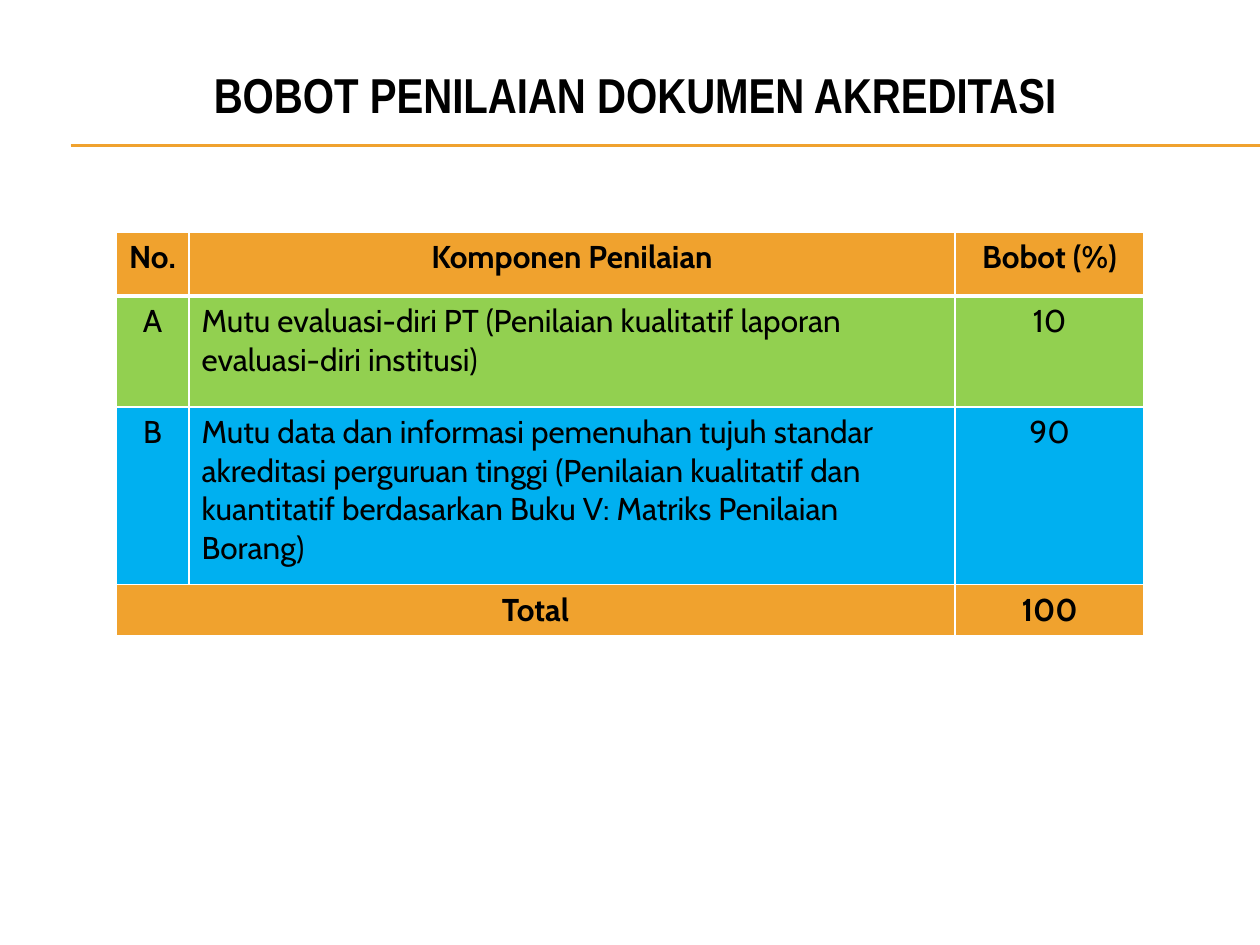
from lxml import etree
from pptx import Presentation, util as u
from pptx.dml.color import RGBColor
from pptx.enum import shapes, text
from pptx.oxml.ns import qn

COLORS = {"black": "000000", "white": "FFFFFF", "orange": "F0A22E",
          "green": "92D050", "blue": "00B0F0"}
CENTER, LEFT = text.PP_ALIGN.CENTER, text.PP_ALIGN.LEFT


def rgb(name):
    return RGBColor.from_string(COLORS[name])


def write(tf, content, font="Cabin", size=18, bold=False, align=CENTER, color="black"):
    p = tf.paragraphs[0]
    p.alignment = align
    r = p.add_run()
    r.text = content
    r.font.name, r.font.size, r.font.bold = font, u.Pt(size), bold
    r.font.color.rgb = rgb(color)


def add_border(cell, side, points):
    """Draw one white cell edge; call before the cell gets its fill."""
    tc_pr = cell._tc.get_or_add_tcPr()
    ln = etree.SubElement(tc_pr, qn("a:ln" + side), w=str(u.Pt(points)))
    fill = etree.SubElement(ln, qn("a:solidFill"))
    etree.SubElement(fill, qn("a:srgbClr"), val=COLORS["white"])


class SlideBuilder:
    """Places elements by shares of the slide's width and height."""

    def __init__(self, prs):
        self.width, self.height = prs.slide_width, prs.slide_height
        self.s = prs.slides.add_slide(prs.slide_layouts[5])

    def x(self, share):
        return u.Emu(round(share * self.width))

    def y(self, share):
        return u.Emu(round(share * self.height))

    def title(self, content, left, top, width, height):
        sp = self.s.shapes.title
        sp.left, sp.top = self.x(left), self.y(top)
        sp.width, sp.height = self.x(width), self.y(height)
        sp.text_frame.vertical_anchor = text.MSO_ANCHOR.MIDDLE
        write(sp.text_frame, content, font="Arial Narrow", size=28, bold=True)

    def rule(self, left, right, top):
        line = self.s.shapes.add_connector(
            shapes.MSO_CONNECTOR.STRAIGHT, self.x(left), self.y(top), self.x(right), self.y(top))
        line.line.color.rgb = rgb("orange")
        line.line.width = u.Pt(0.75)
        etree.SubElement(line._element.spPr, qn("a:effectLst"))

    def table(self, rows, left, top, col_shares, row_shares):
        """Each row is (fill, bold, cell texts); None merges into the cell to its left."""
        table = self.s.shapes.add_table(
            len(rows), len(col_shares), self.x(left), self.y(top),
            self.x(sum(col_shares)), self.y(sum(row_shares))).table
        table.horz_banding = False
        for column, share in zip(table.columns, col_shares):
            column.width = self.x(share)
        for i, (fill, bold, texts) in enumerate(rows):
            table.rows[i].height = self.y(row_shares[i])
            for j, content in enumerate(texts):
                cell = table.cell(i, j)
                for side in "LRTB":
                    under_header = (i, side) in ((0, "B"), (1, "T"))
                    add_border(cell, side, 3 if under_header else 1)
                cell.fill.solid()
                cell.fill.fore_color.rgb = rgb(fill)
                if content is None:
                    table.cell(i, j - 1).merge(cell)
                else:
                    align = LEFT if j == 1 and not bold else CENTER
                    write(cell.text_frame, content, bold=bold, align=align)


def main():
    prs = Presentation()
    prs.slide_width, prs.slide_height = u.Inches(10), u.Inches(7.5)
    slide = SlideBuilder(prs)
    for top in (1.15, 1.16):
        slide.rule(0.056, 1, top / 7.5)
    slide.title("BOBOT PENILAIAN DOKUMEN AKREDITASI", 0.05, 0, 0.908, 1.49 / 7.5)
    rows = [
        ("orange", True, ["No.", "Komponen Penilaian", "Bobot (%)"]),
        ("green", False, ["A", "Mutu evaluasi-diri PT (Penilaian kualitatif laporan "
                               "evaluasi-diri institusi)", "10"]),
        ("blue", False, ["B", "Mutu data dan informasi pemenuhan tujuh standar akreditasi "
                              "perguruan tinggi (Penilaian kualitatif dan kuantitatif "
                              "berdasarkan Buku V: Matriks Penilaian Borang)", "90"]),
        ("orange", True, ["Total", None, "100"]),
    ]
    slide.table(rows, 0.092, 1.84 / 7.5, [0.058, 0.608, 0.15],
                [h / 7.5 for h in (0.51, 0.88, 1.41, 0.4)])
    prs.save("out.pptx")


if __name__ == "__main__":
    main()
